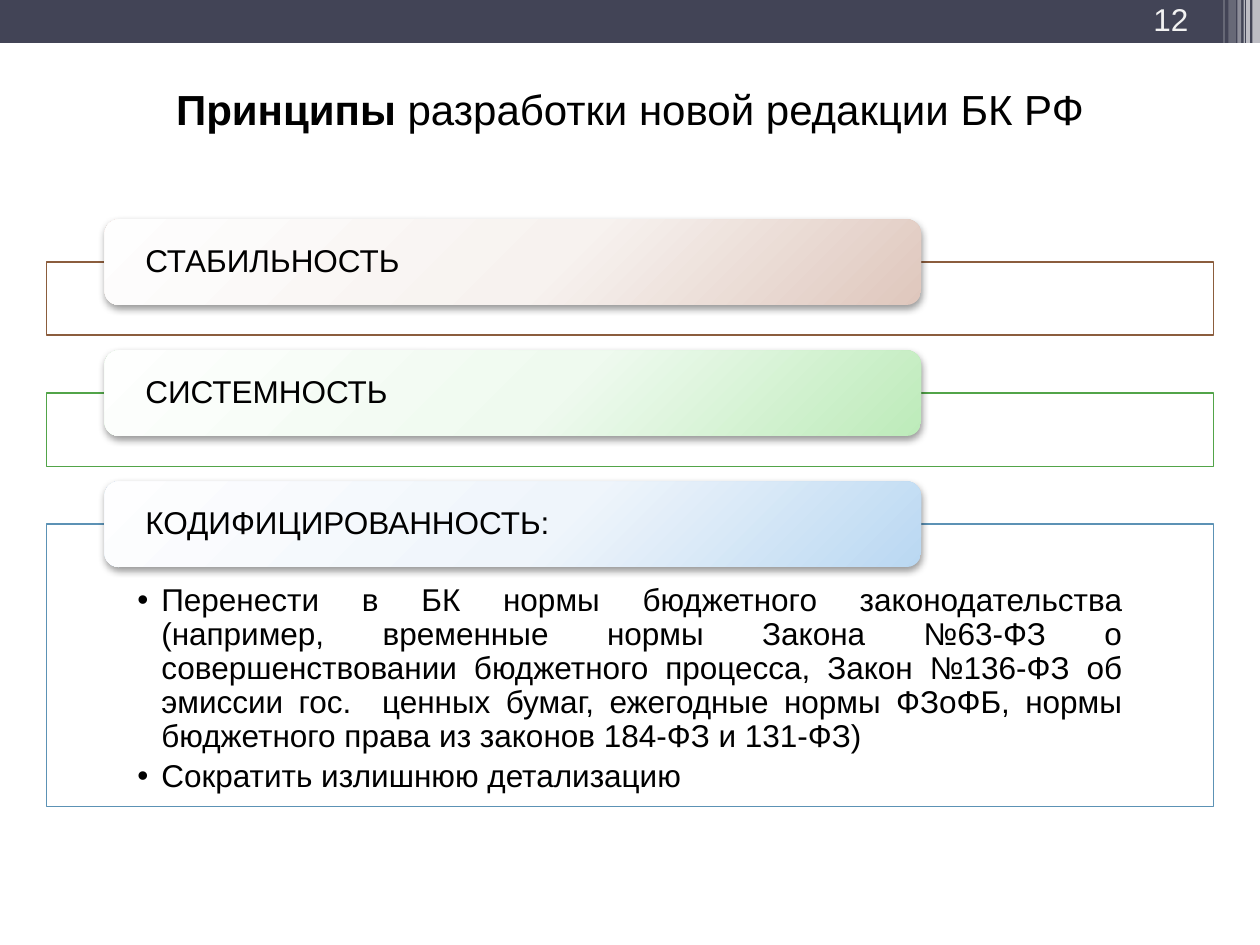
import pptx
import pptx.dml.color
import pptx.enum.shapes
import pptx.enum.text
import pptx.oxml
import pptx.oxml.ns
import pptx.util
from pptx.util import Inches

COLORS = {"header": "424456", "white": "FFFFFF", "black": "000000", "number": "F2F2F2"}
TITLE = [("Принципы ", True), ("разработки новой редакции БК РФ", False)]
PAGE = "12"
# Heading, panel line, gradient stops, panel height
PRINCIPLES = [
    ("СТАБИЛЬНОСТЬ", "8B5D3D", ("FEFEFE", "F7F2EF", "DFC7BD"), 0.58),
    ("СИСТЕМНОСТЬ", "52A449", ("FEFFFE", "EFFAEF", "BDEBBA"), 0.58),
    ("КОДИФИЦИРОВАННОСТЬ:", "5C92B5", ("FEFEFF", "EFF5FB", "BAD8F2"), 2.24),
]
DETAILS = [
    "Перенести в БК нормы бюджетного законодательства (например, временные нормы "
    "Закона №63-ФЗ о совершенствовании бюджетного процесса, Закон №136-ФЗ об эмиссии "
    "гос.  ценных бумаг, ежегодные нормы ФЗоФБ, нормы бюджетного права из законов "
    "184-ФЗ и 131-ФЗ)",
    "Сократить излишнюю детализацию",
]
# Left, width, height, opacity in percent
STRIPES = [
    (9.94, 0.06, 0.68, 65), (9.89, 0.03, 0.68, 65), (9.87, 0.01, 0.68, 60),
    (9.82, 0.03, 0.68, 40), (9.75, 0.06, 0.64, 20), (9.71, 0.01, 0.64, 30),
]
CARD_TOP, CARD_H, PITCH = 1.74, 0.68, 1.04
PANEL_X, PANEL_W = 0.37, 9.26

SHAPE = pptx.enum.shapes.MSO_SHAPE
ALIGN = pptx.enum.text.PP_ALIGN
ANCHOR = pptx.enum.text.MSO_ANCHOR
NS = pptx.oxml.ns.nsdecls("a")


def rgb(value):
    return pptx.dml.color.RGBColor.from_string(value)


def place(sp, *box):
    sp.left, sp.top, sp.width, sp.height = map(Inches, box)


def add_box(s, kind, box, fill, opacity=100, line=None):
    sp = s.shapes.add_shape(kind, *map(Inches, box))
    sp.shadow.inherit = False
    sp.fill.solid()
    sp.fill.fore_color.rgb = rgb(fill)
    if opacity < 100:
        color = sp.fill._xPr.find(".//" + pptx.oxml.ns.qn("a:srgbClr"))
        color.append(pptx.oxml.parse_xml(f'<a:alpha {NS} val="{opacity * 1000}"/>'))
    if line:
        sp.line.color.rgb = rgb(line)
        sp.line.width = pptx.util.Pt(0.75)
    else:
        sp.line.fill.background()
    return sp


def style_card(sp, stops):
    """Give a card its radial gradient and soft drop shadow."""
    stop_xml = "".join(
        f'<a:gs pos="{pos * 1000}"><a:srgbClr val="{color}"/></a:gs>'
        for pos, color in zip((0, 55, 100), stops))
    gradient = pptx.oxml.parse_xml(
        f'<a:gradFill {NS} rotWithShape="1"><a:gsLst>{stop_xml}</a:gsLst>'
        '<a:path path="circle"><a:fillToRect l="-40000" t="-90000" r="140000" b="190000"/>'
        '</a:path></a:gradFill>')
    shadow = pptx.oxml.parse_xml(
        f'<a:outerShdw {NS} blurRad="{pptx.util.Pt(4.1)}" dist="{pptx.util.Pt(2)}" '
        'dir="5400000" rotWithShape="0"><a:srgbClr val="000000"><a:alpha val="40000"/>'
        '</a:srgbClr></a:outerShdw>')
    props = sp._element.spPr
    solid = props.find(pptx.oxml.ns.qn("a:solidFill"))
    props.replace(solid, gradient)
    props.find(pptx.oxml.ns.qn("a:effectLst")).append(shadow)


def write(sp, paragraphs, size=18, color="black", align=ALIGN.JUSTIFY,
          anchor=ANCHOR.MIDDLE, insets=(0.1, 0.05, 0.1, 0.05), spacing=None,
          after=0, hanging=None):
    """Fill a shape with paragraphs, each a list of (text, bold) runs."""
    tf = sp.text_frame
    tf.word_wrap = True
    tf.auto_size = pptx.enum.text.MSO_AUTO_SIZE.NONE
    tf.vertical_anchor = anchor
    tf.margin_left, tf.margin_top, tf.margin_right, tf.margin_bottom = map(Inches, insets)
    for i, runs in enumerate(paragraphs):
        p = tf.add_paragraph() if i else tf.paragraphs[0]
        p.alignment = align
        p.space_before, p.space_after = pptx.util.Pt(0), pptx.util.Pt(after)
        if spacing:
            p.line_spacing = spacing
        if hanging:
            props = p._p.get_or_add_pPr()
            props.set("marL", str(Inches(hanging)))
            props.set("indent", str(-Inches(hanging)))
            props.append(pptx.oxml.parse_xml(f'<a:buChar {NS} char="•"/>'))
        for text, bold in runs:
            r = p.add_run()
            r.text = text
            r.font.name, r.font.size, r.font.bold = "Arial", pptx.util.Pt(size), bold
            r.font.color.rgb = rgb(COLORS[color])


def main():
    prs = pptx.Presentation()
    prs.slide_width, prs.slide_height = Inches(10), Inches(7.5)
    s = prs.slides.add_slide(prs.slide_layouts[1])
    title, body = s.shapes.title, s.placeholders[1]

    add_box(s, SHAPE.RECTANGLE, (0, 0, 10, 0.34), COLORS["header"])
    for left, width, height, opacity in STRIPES:
        add_box(s, SHAPE.RECTANGLE, (left, 0, width, height), COLORS["white"], opacity)

    place(title, 0, 0.43, 10, 0.86)
    write(title, [TITLE], size=24, align=ALIGN.CENTER)
    number = s.shapes.add_textbox(*map(Inches, (8.74, 0.02, 0.79, 0.33)))
    write(number, [[(PAGE, False)]], color="number", align=ALIGN.RIGHT, anchor=ANCHOR.BOTTOM)

    for i, (heading, line, stops, panel_h) in enumerate(PRINCIPLES):
        top = CARD_TOP + i * PITCH
        panel = (PANEL_X, top + CARD_H / 2, PANEL_W, panel_h)
        add_box(s, SHAPE.RECTANGLE, panel, COLORS["white"], 90, line)
        card = add_box(s, SHAPE.ROUNDED_RECTANGLE, (0.83, top, 6.48, CARD_H), stops[0])
        style_card(card, stops)
        write(card, [[(heading, False)]], insets=(0.29, 0, 0.29, 0), spacing=0.9)

    # The details sit in the last panel, above its fill
    place(body, *panel)
    s.shapes._spTree.append(body._element)
    write(body, [[(text, False)] for text in DETAILS], anchor=ANCHOR.TOP,
          insets=(0.72, 0.48, 0.72, 0.14), spacing=0.9, after=3, hanging=0.19)
    prs.save("out.pptx")


if __name__ == "__main__":
    main()
